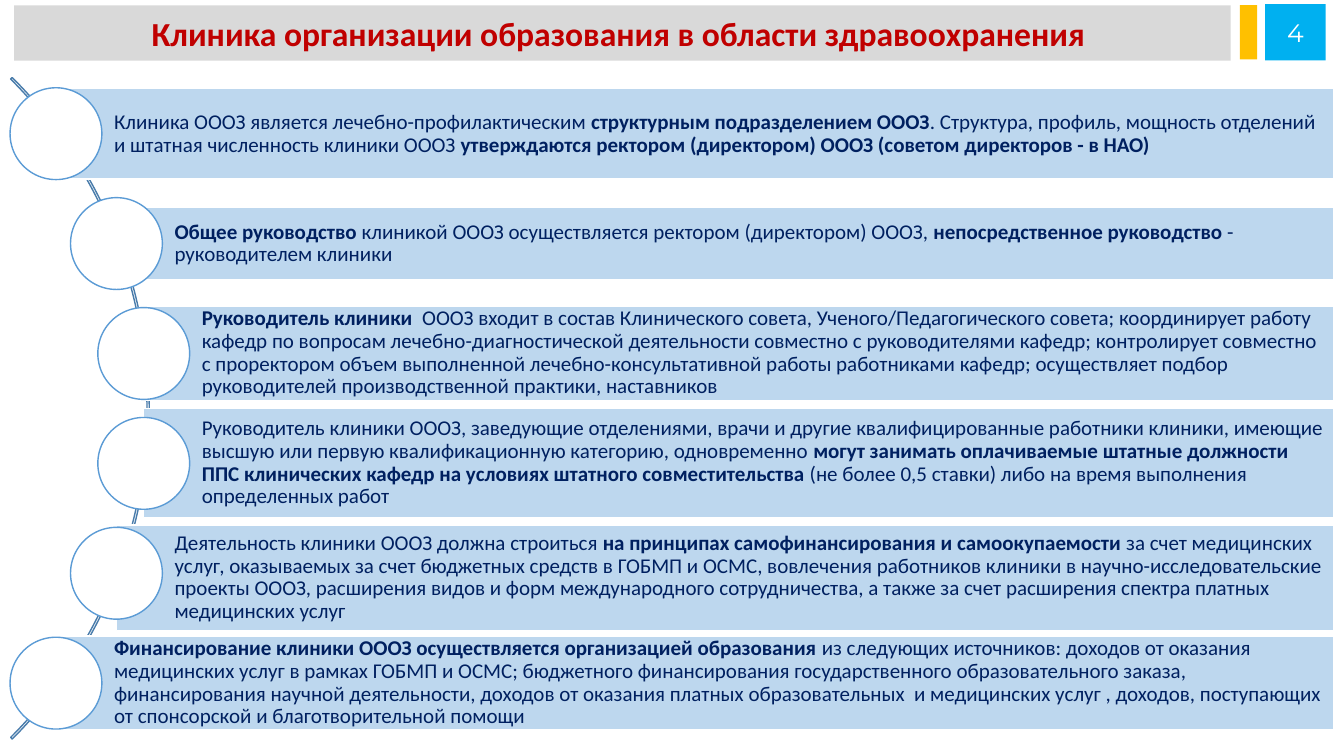
from dataclasses import dataclass

from pptx import Presentation
from pptx.dml.color import RGBColor
from pptx.enum import shapes, text
from pptx.util import Pt


@dataclass(frozen=True)
class Theme:
    grey: str = "D9D9D9"
    gold: str = "FFC000"
    cyan: str = "00B0F0"
    pale: str = "BDD7EE"
    white: str = "FFFFFF"
    red: str = "C00000"
    navy: str = "002060"
    ring: str = "5B9BD5"
    arc: str = "497CAB"
    font: str = "Calibri"
    digit: str = "Montserrat"
    head: float = 24
    page: float = 18
    body: float = 15


@dataclass(frozen=True)
class Box:
    left: float
    top: float
    width: float
    height: float

    def args(self) -> list:
        return [Pt(v) for v in (self.left, self.top, self.width, self.height)]


@dataclass(frozen=True)
class Item:
    """One band; words between asterisks are bold."""
    left: float
    top: float
    height: float
    words: str


THEME = Theme()
KIND = shapes.MSO_SHAPE
RIGHT = 952.8
DISC = 65.6
FIRST = 62.7
PITCH = 78.5
ARC = 668.2
OUTER, MIDDLE, INNER = 7.2, 50.4, 69.9

ITEMS = [
    Item(OUTER, 63.4, 64.6,
         "Клиника ОООЗ является лечебно-профилактическим *структурным "
         "подразделением ОООЗ*. Структура, профиль, мощность отделений и штатная "
         "численность клиники ОООЗ *утверждаются ректором (директором) ОООЗ "
         "(советом директоров - в НАО)*"),
    Item(MIDDLE, 147.9, 52.2,
         "*Общее руководство *клиникой ОООЗ осуществляется ректором (директором) "
         "ОООЗ, *непосредственное руководство *- руководителем клиники"),
    Item(INNER, 218.5, 67.5,
         "*Руководитель клиники  *ОООЗ входит в состав Клинического совета, "
         "Ученого/Педагогического совета; координирует работу кафедр по вопросам "
         "лечебно-диагностической деятельности совместно с руководителями кафедр; "
         "контролирует совместно с проректором объем выполненной "
         "лечебно-консультативной работы работниками кафедр; осуществляет подбор "
         "руководителей производственной практики, наставников"),
    Item(INNER, 291.6, 78.2,
         "Руководитель клиники ОООЗ, заведующие отделениями, врачи и другие "
         "квалифицированные работники клиники, имеющие высшую или первую "
         "квалификационную категорию, одновременно *могут занимать оплачиваемые "
         "штатные должности ППС клинических кафедр на условиях штатного "
         "совместительства *(не более 0,5 ставки) либо на время выполнения "
         "определенных работ"),
    Item(MIDDLE, 375.1, 75.3,
         "Деятельность клиники ОООЗ должна строиться *на принципах "
         "самофинансирования и самоокупаемости *за счет медицинских услуг, "
         "оказываемых за счет бюджетных средств в ГОБМП и ОСМС, вовлечения "
         "работников клиники в научно-исследовательские проекты ОООЗ, расширения "
         "видов и форм международного сотрудничества, а также за счет расширения "
         "спектра платных медицинских услуг"),
    Item(OUTER, 454.4, 66.8,
         "*Финансирование клиники ОООЗ осуществляется организацией образования "
         "*из следующих источников: доходов от оказания медицинских услуг в рамках "
         "ГОБМП и ОСМС; бюджетного финансирования государственного "
         "образовательного заказа, финансирования научной деятельности, доходов от "
         "оказания платных образовательных  и медицинских услуг , доходов, "
         "поступающих от спонсорской и благотворительной помощи"),
]


def apply(target, values: dict) -> None:
    for name, value in values.items():
        setattr(target, name, value)


def paint(shape, fill: str | None, line: str | None = None) -> None:
    if fill:
        shape.fill.solid()
        shape.fill.fore_color.rgb = RGBColor.from_string(fill)
    else:
        shape.fill.background()
    if line:
        shape.line.color.rgb = RGBColor.from_string(line)
        shape.line.width = Pt(1)
    else:
        shape.line.fill.background()


def draw(slide, kind, box: Box, fill: str | None, line: str | None = None):
    shape = slide.shapes.add_shape(kind, *box.args())
    shape.shadow.inherit = False
    paint(shape, fill, line)
    return shape


def write(shape, words: str, size: float, color: str, font: str,
          align=text.PP_ALIGN.CENTER, frame: dict | None = None):
    """Fill a shape with text, switching bold at each asterisk."""
    body = shape.text_frame
    apply(body, {"word_wrap": True, "auto_size": text.MSO_AUTO_SIZE.NONE,
                 "vertical_anchor": text.MSO_ANCHOR.MIDDLE, **(frame or {})})
    para = body.paragraphs[0]
    para.alignment = align
    for i, part in enumerate(words.split("*")):
        if part:
            run = para.add_run()
            run.text = part
            apply(run.font, {"name": font, "size": Pt(size), "bold": i % 2 == 1})
            run.font.color.rgb = RGBColor.from_string(color)
    return para


def header(slide) -> None:
    title = slide.shapes.title
    apply(title, dict(zip(("left", "top", "width", "height"),
                          Box(10, 3.9, 869, 39.4).args())))
    paint(title, THEME.grey)
    write(title, "*Клиника организации образования в области здравоохранения *",
          THEME.head, THEME.red, THEME.font)
    draw(slide, KIND.RECTANGLE, Box(885.6, 3.6, 12.4, 38.9), THEME.gold)
    page = draw(slide, KIND.RECTANGLE, Box(903.6, 2.9, 43.4, 40.3), THEME.cyan)
    write(page, "4", THEME.page, THEME.white, THEME.digit)


def curve(slide) -> None:
    arc = draw(slide, KIND.BLOCK_ARC, Box(-561.6, -42.5, ARC, ARC), None, THEME.arc)
    for i, value in enumerate((189, 27, 1.6 / ARC)):
        arc.adjustments[i] = value


def band(slide, item: Item, row: int) -> None:
    left = item.left + DISC / 2
    bar = draw(slide, KIND.RECTANGLE,
               Box(left, item.top, RIGHT - left, item.height),
               THEME.pale, THEME.white)
    inset = {"margin_" + side: Pt(2.9) for side in ("top", "right", "bottom")}
    para = write(bar, item.words, THEME.body, THEME.navy, THEME.font,
                 text.PP_ALIGN.LEFT, {**inset, "margin_left": Pt(41.5)})
    para.line_spacing = 0.9
    draw(slide, KIND.OVAL, Box(item.left, FIRST + row * PITCH, DISC, DISC),
         THEME.white, THEME.ring)


def main() -> None:
    deck = Presentation()
    apply(deck, {"slide_width": Pt(960), "slide_height": Pt(540)})
    slide = deck.slides.add_slide(deck.slide_layouts[5])
    header(slide)
    curve(slide)
    for row, item in enumerate(ITEMS):
        band(slide, item, row)
    deck.save("out.pptx")


if __name__ == "__main__":
    main()
